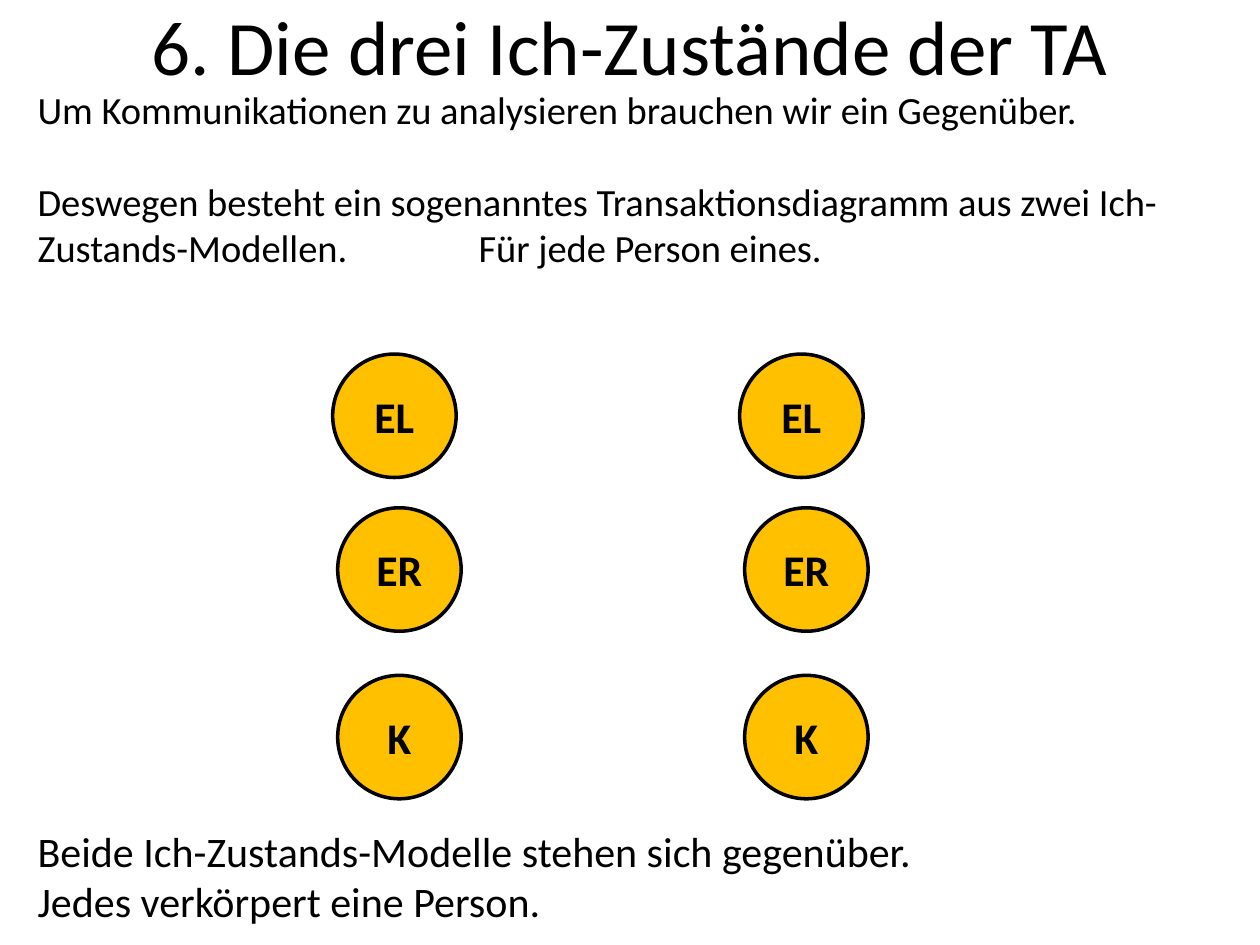
from pptx import Presentation
from pptx.dml.color import RGBColor
from pptx.enum.shapes import MSO_SHAPE as Shape
from pptx.enum.text import MSO_ANCHOR as Anchor, PP_ALIGN as Align
from pptx.util import Inches, Pt

FONT, BLACK, AMBER = "Calibri", "000000", "FFC000"

TITLE = "6. Die drei Ich-Zustände der TA"
# text, size, space before (points)
BODY = [
    ("Um Kommunikationen zu analysieren brauchen wir ein Gegenüber.", 22, 0),
    ("Deswegen besteht ein sogenanntes Transaktionsdiagramm aus zwei "
     "Ich-Zustands-Modellen. \t\tFür jede Person eines.", 22, 26.5),
    ("Beide Ich-Zustands-Modelle stehen sich gegenüber.", 24, 317),
    ("Jedes verkörpert eine Person.", 24, 0),
]
# label, offset from the person's left edge, top (inches)
EGO_STATES = [("EL", 0, 2.81), ("ER", 0.04, 4.03), ("K", 0.04, 5.36)]
PERSON_LEFTS = [2.64, 5.87]
DIAMETER = 0.98


def color(value):
    return RGBColor.from_string(value)


def write(frame, lines, align, bold=False):
    """Fill a text frame with (text, size, space before) paragraphs."""
    frame.word_wrap = True
    frame.vertical_anchor = Anchor.MIDDLE
    for index, (text, size, gap) in enumerate(lines):
        para = frame.add_paragraph() if index else frame.paragraphs[0]
        para.alignment = align
        para.space_before = Pt(gap)
        span = para.add_run()
        span.text = text
        style = {"name": FONT, "size": Pt(size), "bold": bold}
        for name, value in style.items():
            setattr(span.font, name, value)
        span.font.color.rgb = color(BLACK)


def add_text(page, area, lines, align):
    box = page.shapes.add_textbox(*map(Inches, area))
    write(box.text_frame, lines, align)


def add_ego_state(page, label, left, top):
    area = map(Inches, (left, top, DIAMETER, DIAMETER))
    circle = page.shapes.add_shape(Shape.OVAL, *area)
    circle.shadow.inherit = False
    circle.fill.solid()
    circle.fill.fore_color.rgb = color(AMBER)
    circle.line.color.rgb = color(BLACK)
    circle.line.width = Pt(2)
    write(circle.text_frame, [(label, 25, 0)], Align.CENTER, bold=True)


deck = Presentation()
deck.slide_width, deck.slide_height = Inches(10), Inches(7.5)
page = deck.slides.add_slide(deck.slide_layouts[6])

add_text(page, (0.2, 0.6, 9.49, 6.83), BODY, Align.LEFT)
for person_left in PERSON_LEFTS:
    for label, offset, top in EGO_STATES:
        add_ego_state(page, label, person_left + offset, top)
add_text(page, (0.5, -0.27, 9, 1.25), [(TITLE, 44, 0)], Align.CENTER)

deck.save("out.pptx")
